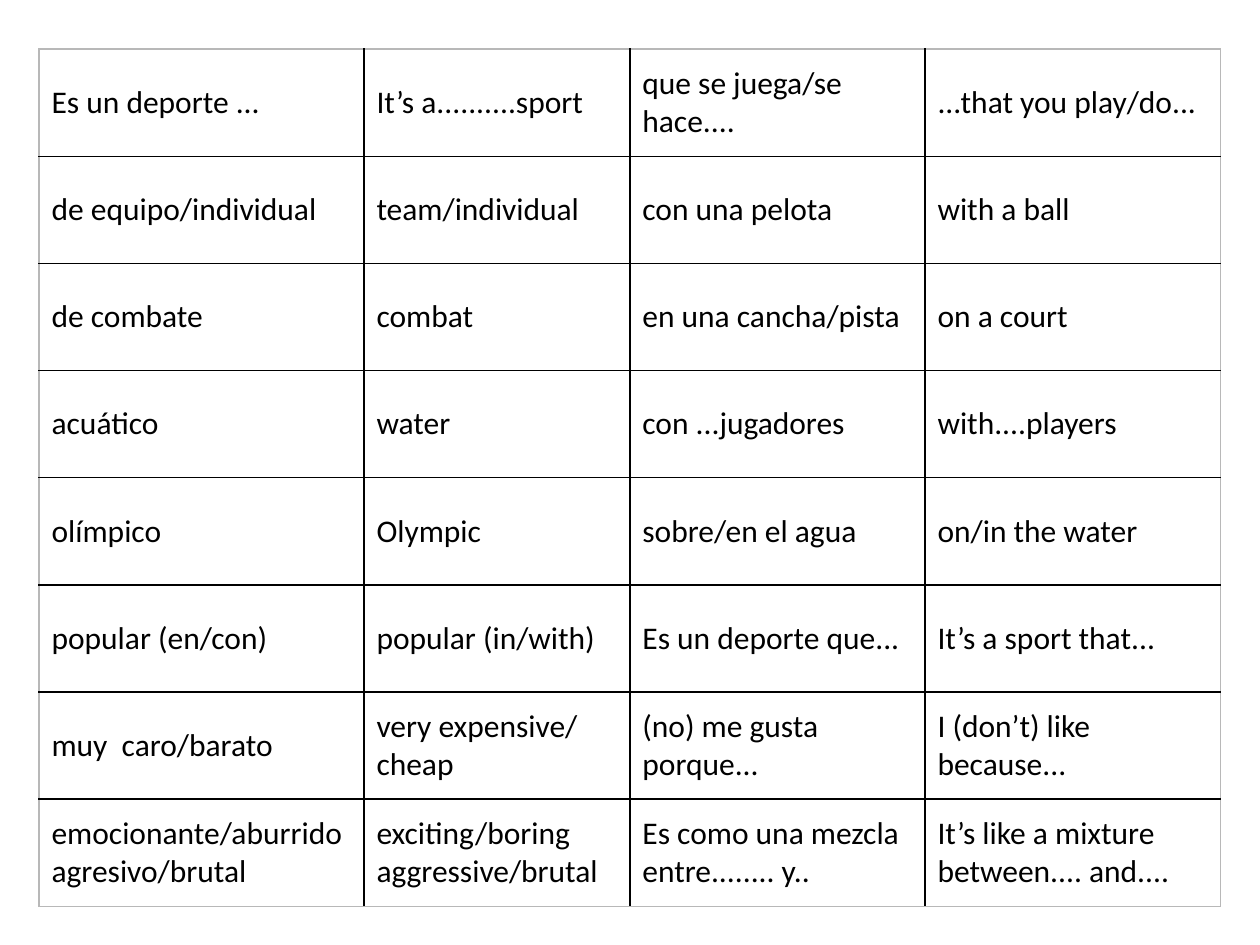
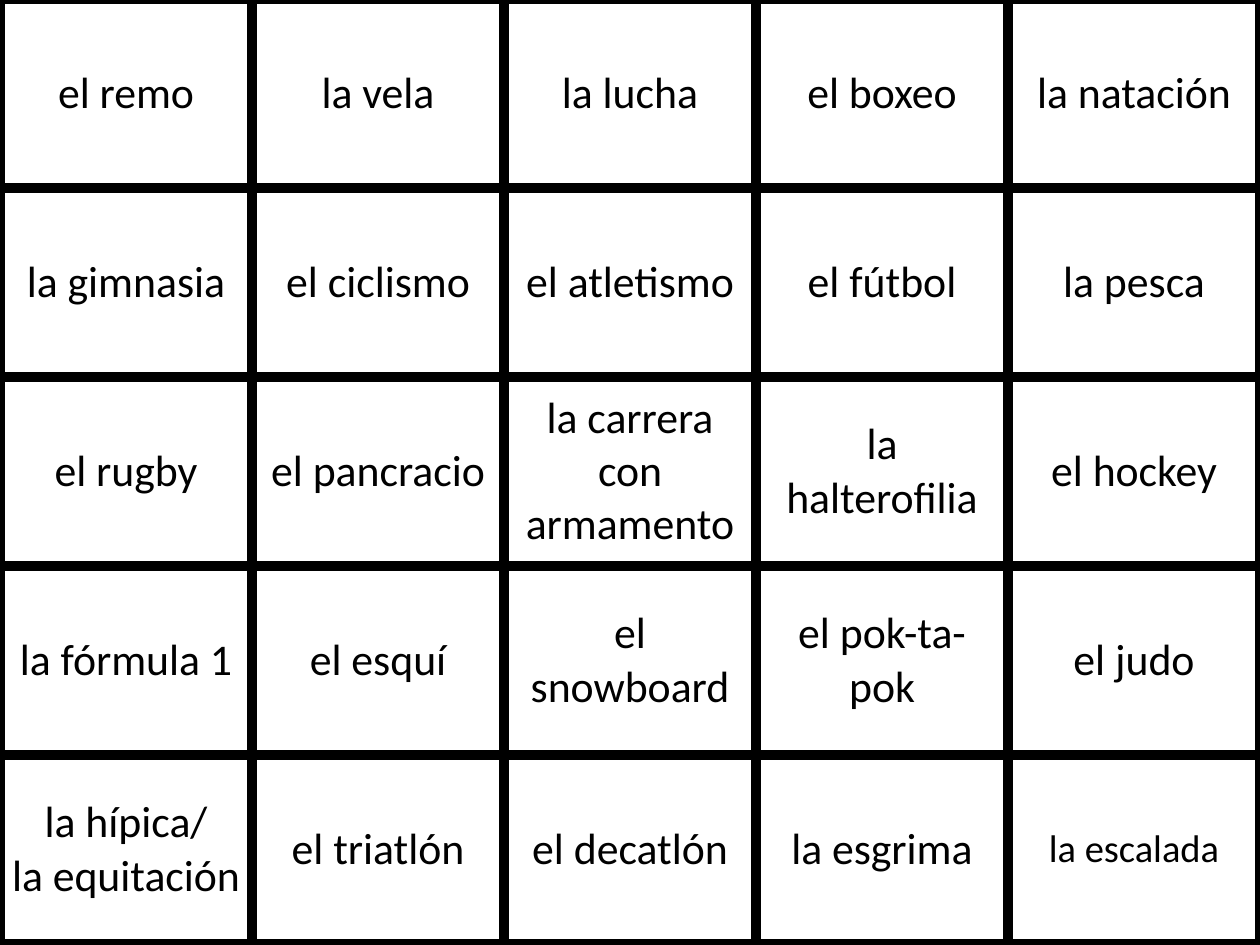
from lxml import etree
from pptx import Presentation
from pptx import util as u
from pptx.dml import color
from pptx.enum import text
from pptx.oxml import ns

INK = "000000"
PAPER = "FFFFFF"
EDGE = "B8B8B8"

PHRASES = [
    ["Es un deporte ...", "It’s a..........sport", "que se juega/se hace....", "...that you play/do..."],
    ["de equipo/individual", "team/individual", "con una pelota", "with a ball"],
    ["de combate", "combat", "en una cancha/pista", "on a court"],
    ["acuático", "water", "con ...jugadores", "with....players"],
    ["olímpico", "Olympic", "sobre/en el agua", "on/in the water"],
    ["popular (en/con)", "popular (in/with)", "Es un deporte que...", "It’s a sport that..."],
    ["muy  caro/barato", "very expensive/\vcheap", "(no) me gusta porque...", "I (don’t) like because..."],
    ["emocionante/aburrido\vagresivo/brutal", "exciting/boring\vaggressive/brutal",
     "Es como una mezcla entre........ y..", "It’s like a mixture between.... and...."],
]

SPORTS = [
    ["el remo", "la vela", "la lucha", "el boxeo", "la natación"],
    ["la gimnasia", "el ciclismo", "el atletismo", "el fútbol", "la pesca"],
    ["el rugby", "el pancracio", "la carrera con armamento", "la halterofilia", "el hockey"],
    ["la fórmula 1", "el esquí", "el snowboard", "el pok-ta-pok", "el judo"],
    ["la hípica/\vla equitación", "el triatlón", "el decatlón", "la esgrima", "la escalada"],
]


def rgb(value):
    return color.RGBColor.from_string(value)


class CardDeck:
    """Holds the shared style and the current slide of the vocabulary cards."""

    font = "Calibri"

    def __init__(self):
        self.deck = Presentation()
        self.deck.slide_width, self.deck.slide_height = u.Cm(25.4), u.Cm(19.05)
        self.page = None

    def add_page(self):
        self.page = self.deck.slides.add_slide(self.deck.slide_layouts[6])

    def label(self, cell, words, size, align):
        cell.text_frame.text = words
        cell.vertical_anchor = text.MSO_ANCHOR.MIDDLE
        for para in cell.text_frame.paragraphs:
            para.alignment = align
            for span in para.runs:
                span.font.name = self.font
                span.font.size = u.Pt(size)
                span.font.color.rgb = rgb(INK)

    def rule(self, cell, borders):
        properties = cell._tc.get_or_add_tcPr()
        for index, (side, (shade, width)) in enumerate(borders.items()):
            line = etree.Element(ns.qn(f"a:ln{side}"), w=str(u.Pt(width)))
            fill = etree.SubElement(line, ns.qn("a:solidFill"))
            etree.SubElement(fill, ns.qn("a:srgbClr"), val=shade)
            properties.insert(index, line)

    def add_grid(self, left, top, widths, height, rows, size, align, inset, inner, outer):
        last_row, last_column = len(rows) - 1, len(widths) - 1
        table = self.page.shapes.add_table(
            len(rows), len(widths), u.Cm(left), u.Cm(top),
            u.Cm(sum(widths)), u.Cm(height * len(rows))).table
        table.first_row = table.horz_banding = False
        for column, width in zip(table.columns, widths):
            column.width = u.Cm(width)
        for r, row in enumerate(rows):
            table.rows[r].height = u.Cm(height)
            for c, words in enumerate(row):
                cell = table.cell(r, c)
                cell.fill.solid()
                cell.fill.fore_color.rgb = rgb(PAPER)
                cell.margin_left = cell.margin_right = u.Cm(inset)
                self.label(cell, words, size, align)
                self.rule(cell, {
                    "L": outer if c == 0 else inner,
                    "R": outer if c == last_column else inner,
                    "T": outer if r == 0 else inner,
                    "B": outer if r == last_row else inner,
                })
        return table


def main():
    cards = CardDeck()

    cards.add_page()
    cards.add_grid(0.79, 0.99, [6.55, 5.36, 5.95, 5.95], 2.16, PHRASES, 18,
                   text.PP_ALIGN.LEFT, 0.25, (INK, 1), (EDGE, 1))

    cards.add_page()
    thick = (INK, 6)
    sports = cards.add_grid(0, -0.02, [5.08] * 5, 3.81, SPORTS, 25,
                            text.PP_ALIGN.CENTER, 0.23, thick, thick)
    cards.label(sports.cell(4, 4), "la escalada", 22, text.PP_ALIGN.CENTER)

    cards.deck.save("out.pptx")


if __name__ == "__main__":
    main()
